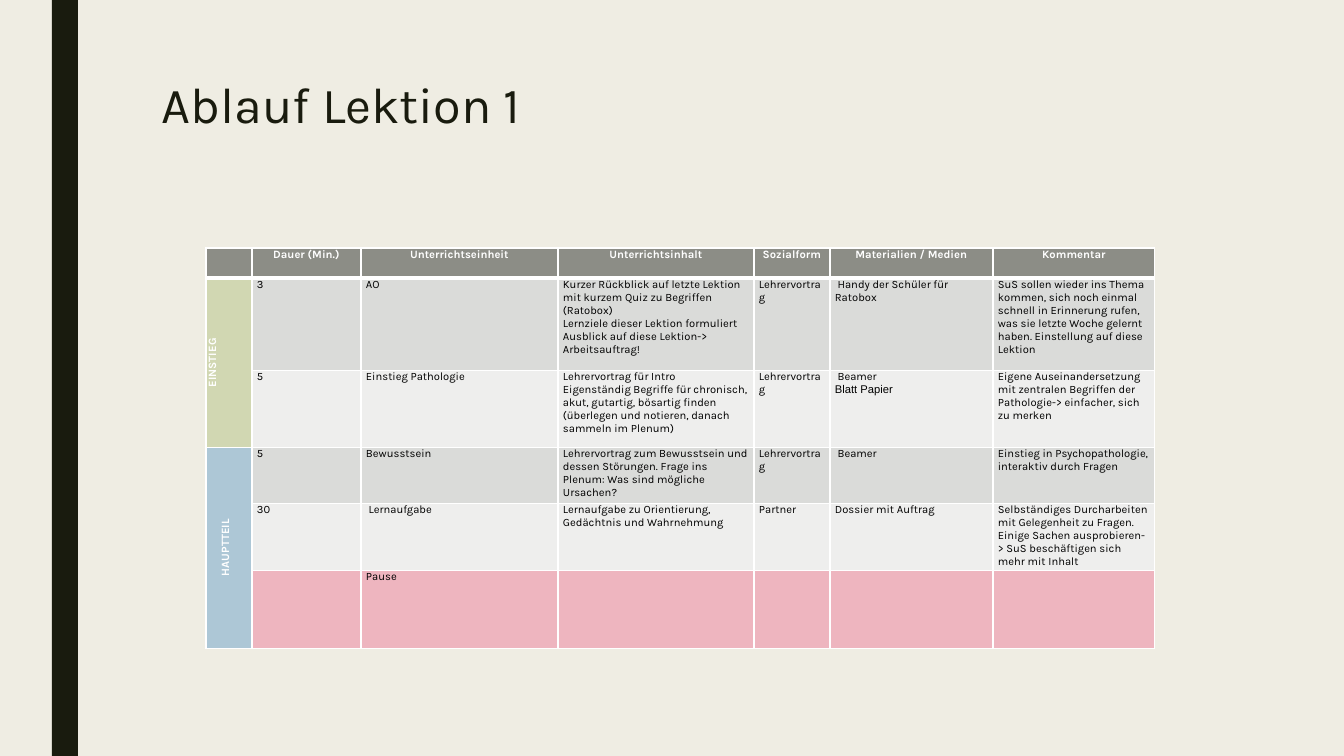
from lxml import etree
from pptx import Presentation
from pptx.dml.color import RGBColor
from pptx.enum.shapes import MSO_SHAPE
from pptx.enum.text import MSO_ANCHOR, PP_ALIGN
from pptx.oxml.ns import qn
from pptx.util import Emu, Pt

RECTANGLE = MSO_SHAPE.RECTANGLE
TOP = MSO_ANCHOR.TOP
LEFT, CENTER = PP_ALIGN.LEFT, PP_ALIGN.CENTER

TITLE = "Ablauf Lektion 1"
HEADINGS = ["", "Dauer (Min.)", "Unterrichtseinheit", "Unterrichtsinhalt",
            "Sozialform", "Materialien / Medien", "Kommentar"]
STEPS = [
    ["3", "AO",
     "Kurzer Rückblick auf letzte Lektion mit kurzem Quiz zu Begriffen (Ratobox)\n"
     "Lernziele dieser Lektion formuliert\n"
     "Ausblick auf diese Lektion-> Arbeitsauftrag!",
     "Lehrervortrag", " Handy der Schüler für Ratobox",
     "SuS sollen wieder ins Thema kommen, sich noch einmal schnell in Erinnerung rufen, "
     "was sie letzte Woche gelernt haben. Einstellung auf diese Lektion"],
    ["5", "Einstieg Pathologie",
     "Lehrervortrag für Intro\n"
     "Eigenständig Begriffe für chronisch, akut, gutartig, bösartig finden "
     "(überlegen und notieren, danach sammeln im Plenum)",
     "Lehrervortrag", " Beamer\nBlatt Papier",
     "Eigene Auseinandersetzung mit zentralen Begriffen der Pathologie-> einfacher, sich zu merken"],
    ["5", "Bewusstsein",
     "Lehrervortrag zum Bewusstsein und dessen Störungen. Frage ins Plenum: "
     "Was sind mögliche Ursachen?",
     "Lehrervortrag", " Beamer",
     "Einstieg in Psychopathologie, interaktiv durch Fragen"],
    ["30", " Lernaufgabe", "Lernaufgabe zu Orientierung, Gedächtnis und Wahrnehmung",
     "Partner", "Dossier mit Auftrag",
     "Selbständiges Durcharbeiten mit Gelegenheit zu Fragen. Einige Sachen ausprobieren-> "
     "SuS beschäftigen sich mehr mit Inhalt"],
    ["", "Pause", "", "", "", ""],
]
PHASES = [
    {"label": "EINSTIEG", "first": 1, "last": 2, "fill": "D1D7B2", "offset": 0},
    {"label": "HAUPTTEIL", "first": 3, "last": 5, "fill": "ADC7D6", "offset": 13},
]
ARIAL_LINES = {"Blatt Papier"}
COLUMN_WIDTHS = [46, 109, 197, 196, 76, 163, 162]
ROW_HEIGHTS = [28, 92, 77, 56, 65, 78]
STEP_FILLS = ["DADBD9", "EEEEED", "DADBD9", "EEEEED", "EEB5BF"]
HEADING_FILL = "8C8D86"
INK, WHITE, BLACK, PAPER = "191B0E", "FFFFFF", "000000", "EFEDE3"
HEADING_FORMAT = {"size": Pt(8), "name": "Karla", "bold": True}
STEP_FORMAT = {"size": Pt(8), "name": "Karla", "bold": False}


def px(length):
    return Emu(round(length * 914400 / 100.8))


def color(value):
    return RGBColor.from_string(value)


def paint(part, value):
    part.fill.solid()
    part.fill.fore_color.rgb = color(value)


def apply(target, values):
    for key, value in values.items():
        setattr(target, key, value)


def write(frame, text, values, ink, align=LEFT):
    for index, line in enumerate(text.split("\n")):
        paragraph = frame.paragraphs[0] if index == 0 else frame.add_paragraph()
        paragraph.alignment = align
        run = paragraph.add_run()
        run.text = line
        apply(run.font, values)
        run.font.color.rgb = color(ink)
        if line in ARIAL_LINES:
            run.font.name = "Arial"


def border(cell, bottom):
    properties = cell._tc.get_or_add_tcPr()
    widths = {"lnL": 1, "lnR": 1, "lnT": 1, "lnB": bottom}
    for position, (side, points) in enumerate(widths.items()):
        line = etree.Element(qn("a:" + side), w=str(Pt(points)))
        fill = etree.SubElement(line, qn("a:solidFill"))
        etree.SubElement(fill, qn("a:srgbClr"), val=WHITE)
        properties.insert(position, line)


def fill_cell(cell, text, fill, values, ink, align=LEFT, bottom=1):
    apply(cell, {"margin_left": px(5), "margin_right": px(5),
                 "margin_top": 0, "margin_bottom": 0, "vertical_anchor": TOP})
    write(cell.text_frame, text, values, ink, align)
    paint(cell, fill)
    border(cell, bottom)


def add_schedule(slide):
    frame = slide.shapes.add_table(len(ROW_HEIGHTS), len(COLUMN_WIDTHS), px(206), px(248),
                                   px(sum(COLUMN_WIDTHS)), px(sum(ROW_HEIGHTS)))
    schedule = frame.table
    for column, width in zip(schedule.columns, COLUMN_WIDTHS):
        column.width = px(width)
    for row, height in zip(schedule.rows, ROW_HEIGHTS):
        row.height = px(height)
    for column, heading in enumerate(HEADINGS):
        fill_cell(schedule.cell(0, column), heading, HEADING_FILL, HEADING_FORMAT,
                  WHITE, CENTER, 3)
    for row, (step, fill) in enumerate(zip(STEPS, STEP_FILLS), 1):
        for column, text in enumerate(step, 1):
            fill_cell(schedule.cell(row, column), text, fill, STEP_FORMAT, BLACK)
    for phase in PHASES:
        cell = schedule.cell(phase["first"], 0)
        cell.merge(schedule.cell(phase["last"], 0))
        fill_cell(cell, phase["label"], phase["fill"], HEADING_FORMAT, WHITE, CENTER)
        cell.margin_top = px(phase["offset"])
        cell._tc.get_or_add_tcPr().set("vert", "vert270")


def main():
    deck = Presentation()
    deck.slide_width, deck.slide_height = px(1344), px(756)
    slide = deck.slides.add_slide(deck.slide_layouts[6])
    paint(slide.background, PAPER)

    bar = slide.shapes.add_shape(RECTANGLE, px(52), 0, px(26), px(756))
    bar.shadow.inherit = False
    paint(bar, INK)
    bar.line.fill.background()

    title = slide.shapes.add_textbox(px(152), px(75), px(1058), px(163)).text_frame
    apply(title, {"word_wrap": True, "vertical_anchor": TOP})
    write(title, TITLE, {"size": Pt(36), "name": "Karla"}, INK)
    title.paragraphs[0].line_spacing = 0.89

    add_schedule(slide)
    deck.save("out.pptx")


if __name__ == "__main__":
    main()
